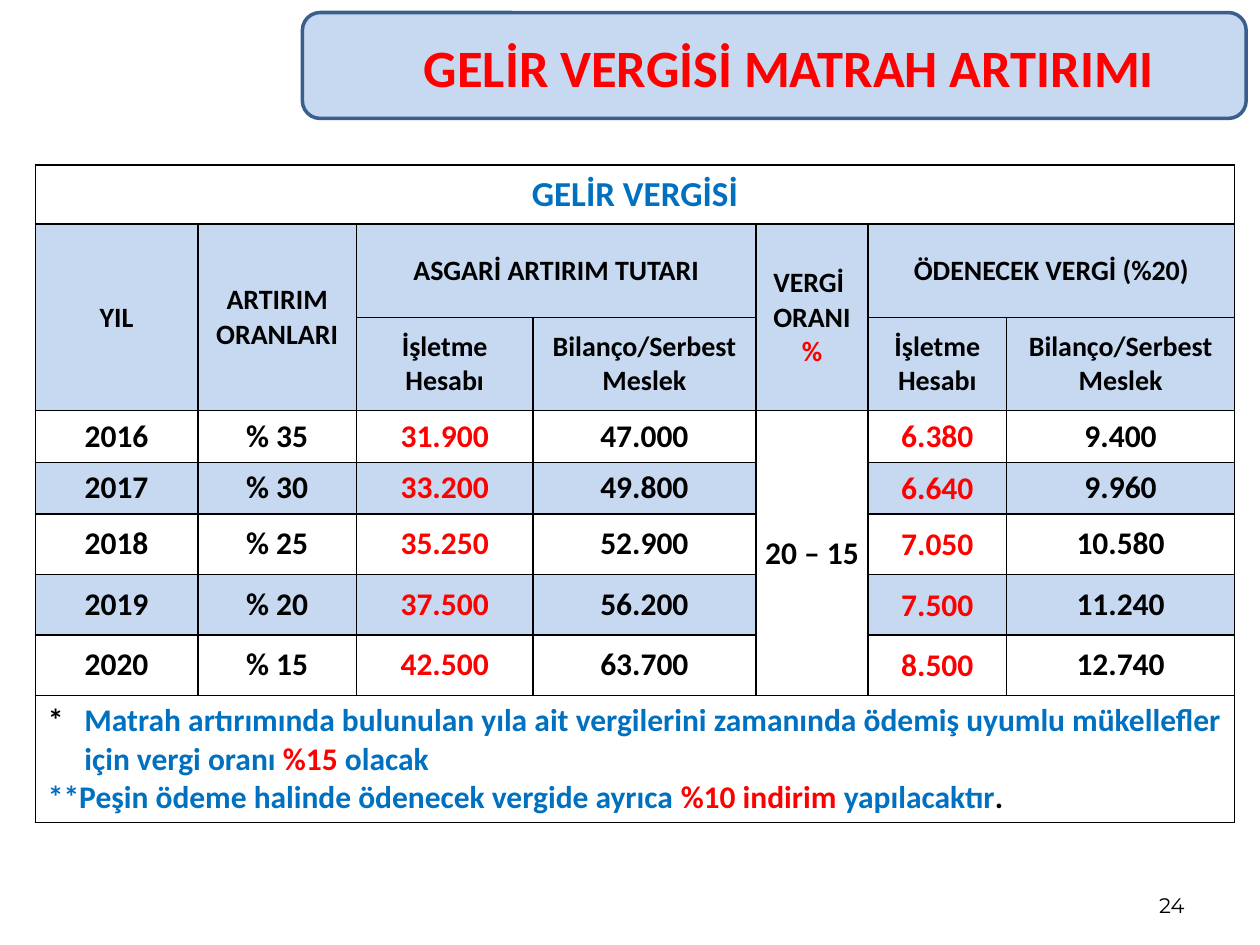
"""Builds the income tax base increase slide."""
import pptx
import pptx.dml.color
import pptx.enum.shapes
import pptx.enum.text
import pptx.oxml
import pptx.oxml.ns
import pptx.util

Inches = pptx.util.Inches
Pt = pptx.util.Pt
ALIGN = pptx.enum.text.PP_ALIGN
MIDDLE = pptx.enum.text.MSO_ANCHOR.MIDDLE
BOTTOM = pptx.enum.text.MSO_ANCHOR.BOTTOM
BLACK, RED, BLUE, PALE, NAVY = "000000", "FF0000", "0070C0", "C6D9F1", "3A5F8C"


def rgb(value):
    return pptx.dml.color.RGBColor.from_string(value)


def write(p, text, size=18, color=BLACK, bold=True, font="Calibri", align=ALIGN.CENTER):
    p.alignment = align
    r = p.add_run()
    r.text = text
    r.font.size, r.font.bold, r.font.name = Pt(size), bold, font
    r.font.color.rgb = rgb(color)


def add_borders(cell, color=BLACK, width=Pt(1)):
    tc_pr = cell._tc.get_or_add_tcPr()
    for i, side in enumerate(("lnL", "lnR", "lnT", "lnB")):
        tc_pr.insert(i, pptx.oxml.parse_xml(
            f'<a:{side} {pptx.oxml.ns.nsdecls("a")} w="{width}"><a:solidFill>'
            f'<a:srgbClr val="{color}"/></a:solidFill></a:{side}>'))


class Deck:
    def __init__(self):
        self.prs = pptx.Presentation()
        self.prs.slide_width, self.prs.slide_height = Inches(10), Inches(7.5)
        self.s = self.prs.slides.add_slide(self.prs.slide_layouts[6])

    def banner(self, *box):
        kind = pptx.enum.shapes.MSO_SHAPE.ROUNDED_RECTANGLE
        sp = self.s.shapes.add_shape(kind, *map(Inches, box))
        sp.shadow.inherit = False
        sp.fill.solid()
        sp.fill.fore_color.rgb = rgb(PALE)
        sp.line.color.rgb = rgb(NAVY)
        sp.line.width = Pt(2)

    def text(self, box, text, anchor=MIDDLE, **fmt):
        tf = self.s.shapes.add_textbox(*map(Inches, box)).text_frame
        tf.word_wrap = True
        tf.vertical_anchor = anchor
        write(tf.paragraphs[0], text, **fmt)

    def table(self, left, top, cols, rows):
        frame = self.s.shapes.add_table(len(rows), len(cols), Inches(left), Inches(top),
                                        Inches(sum(cols)), Inches(sum(rows)))
        table = frame.table
        table.first_row = table.horz_banding = False
        for col, width in zip(table.columns, cols):
            col.width = Inches(width)
        for row, height in zip(table.rows, rows):
            row.height = Inches(height)
        for cell in table.iter_cells():
            cell.fill.background()
            add_borders(cell)
        return table

    def cell(self, table, row, col, lines, fill=None, span=(1, 1), tight=False, **fmt):
        cell = table.cell(row, col)
        if span != (1, 1):
            cell.merge(table.cell(row + span[0] - 1, col + span[1] - 1))
        cell.vertical_anchor = MIDDLE
        if tight:
            cell.margin_left = cell.margin_right = cell.margin_top = Inches(0.01)
            cell.margin_bottom = 0
        if fill:
            cell.fill.solid()
            cell.fill.fore_color.rgb = rgb(fill)
        tf = cell.text_frame
        for i, runs in enumerate(lines):
            p = tf.add_paragraph() if i else tf.paragraphs[0]
            for text, color in runs:
                write(p, text, color=color, **fmt)
        return cell


HEADERS = [
    (1, 0, "YIL", (2, 1)),
    (1, 1, "ARTIRIM ORANLARI", (2, 1)),
    (1, 2, "ASGARİ ARTIRIM TUTARI", (1, 2)),
    (1, 5, "ÖDENECEK VERGİ (%20)", (1, 2)),
    (2, 2, "İşletme Hesabı", (1, 1)),
    (2, 3, "Bilanço/Serbest Meslek", (1, 1)),
    (2, 5, "İşletme Hesabı", (1, 1)),
    (2, 6, "Bilanço/Serbest Meslek", (1, 1)),
]
YEARS = [
    ("2016", "% 35", "31.900", "47.000", "6.380", "9.400"),
    ("2017", "% 30", "33.200", "49.800", "6.640", "9.960"),
    ("2018", "% 25", "35.250", "52.900", "7.050", "10.580"),
    ("2019", "% 20", "37.500", "56.200", "7.500", "11.240"),
    ("2020", "% 15", "42.500", "63.700", "8.500", "12.740"),
]
NOTES = [
    [("*\t", BLACK),
     ("Matrah artırımında bulunulan yıla ait vergilerini zamanında ödemiş uyumlu "
      "mükellefler için vergi oranı", BLUE), (" %15 ", RED), ("olacak", BLUE)],
    [("**Peşin ödeme halinde ödenecek vergide ayrıca ", BLUE), ("%10 indirim ", RED),
     ("yapılacaktır", BLUE), (".", BLACK)],
]


def main():
    deck = Deck()
    deck.banner(2.4, 0.1, 7.49, 0.84)
    deck.text((7.17, 6.83, 2.33, 0.5), "24", anchor=BOTTOM, size=12, bold=False,
              font="Montserrat", align=ALIGN.RIGHT)

    table = deck.table(0.28, 1.31, [1.29, 1.26, 1.4, 1.77, 0.89, 1.1, 1.81],
                       [0.47, 0.74, 0.74, 0.41, 0.41, 0.48, 0.48, 0.48, 1.01])
    deck.cell(table, 0, 0, [[("GELİR VERGİSİ", BLUE)]], span=(1, 7), size=20)
    for row, col, text, span in HEADERS:
        deck.cell(table, row, col, [[(text, BLACK)]], fill=PALE, span=span, size=16)
    deck.cell(table, 1, 4, [[("VERGİ ", BLACK)], [("ORANI", BLACK)], [("%", RED)]],
              fill=PALE, span=(2, 1), size=16)

    for i, values in enumerate(YEARS):
        for col, text in zip((0, 1, 2, 3, 5, 6), values):
            deck.cell(table, 3 + i, col, [[(text, RED if col in (2, 5) else BLACK)]],
                      fill=PALE if i % 2 else None, tight=col == 5)
    deck.cell(table, 3, 4, [[("20 – 15", BLACK)]], span=(len(YEARS), 1), tight=True)

    notes = deck.cell(table, 8, 0, NOTES, span=(1, 7), align=ALIGN.JUSTIFY)
    for p in notes.text_frame.paragraphs:
        p_pr = p._p.get_or_add_pPr()
        p_pr.set("marL", str(Inches(0.29)))
        p_pr.set("indent", str(-Inches(0.29)))

    deck.text((2.8, 0.21, 6.93, 0.63), "GELİR VERGİSİ MATRAH ARTIRIMI", size=30, color=RED)
    deck.prs.save("out.pptx")


if __name__ == "__main__":
    main()
